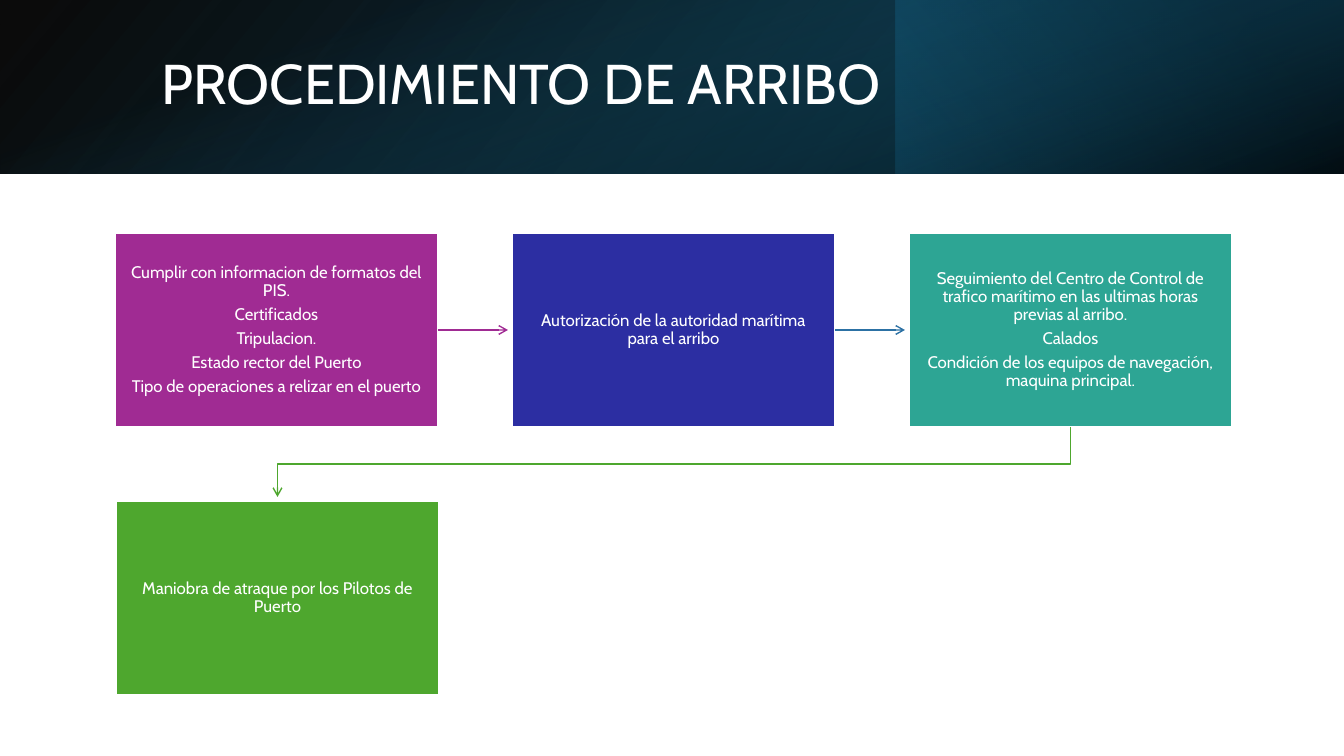
import pptx
import pptx.dml.color
import pptx.enum.dml
import pptx.enum.shapes
import pptx.enum.text
import pptx.oxml
import pptx.oxml.ns
import pptx.util

RGBColor = pptx.dml.color.RGBColor
RECTANGLE = pptx.enum.shapes.MSO_SHAPE.RECTANGLE

EMU_PER_PX = 914400 / 100.8
SLIDE_WIDTH, SLIDE_HEIGHT = 1344, 756
FONT = "Cabin"

WHITE = RGBColor(0xFF, 0xFF, 0xFF)
BLACK = RGBColor(0x00, 0x00, 0x00)
NAVY = RGBColor(0x10, 0x48, 0x62)
DEEP_BLUE = RGBColor(0x0B, 0x30, 0x41)
TEAL_BLUE = RGBColor(0x15, 0x60, 0x82)
PURPLE = RGBColor(0xA0, 0x2B, 0x93)
INDIGO = RGBColor(0x2C, 0x2E, 0xA2)
STEEL = RGBColor(0x2C, 0x71, 0xA4)
TURQUOISE = RGBColor(0x2D, 0xA5, 0x94)
GREEN = RGBColor(0x4E, 0xA7, 0x2E)

# Each step: fill colour and paragraphs
STEPS = [
    (PURPLE, ["Cumplir con informacion de formatos del PIS.",
              "Certificados",
              "Tripulacion.",
              "Estado rector del Puerto",
              "Tipo de operaciones a relizar en el puerto"]),
    (INDIGO, ["Autorización de la autoridad marítima para el arribo"]),
    (TURQUOISE, ["Seguimiento del Centro de Control de trafico marítimo "
                 "en las ultimas horas previas al arribo.",
                 "Calados",
                 "Condición de los equipos de navegación, maquina principal."]),
    (GREEN, ["Maniobra de atraque por los Pilotos de Puerto"]),
]
ARROW_COLORS = [PURPLE, STEEL]
COLUMNS = 3
STEP_WIDTH, STEP_HEIGHT = 323, 194
COLUMN_PITCH, ROW_PITCH = 397, 268
ARROW_GAP = 4


def px(length):
    return pptx.util.Emu(round(length * EMU_PER_PX))


def add_xml_child(parent, tag, **attributes):
    child = pptx.oxml.parse_xml(f"<a:{tag} {pptx.oxml.ns.nsdecls('a')}/>")
    for name, value in attributes.items():
        child.set(name, value)
    parent.append(child)


def style_arrow(arrow, color):
    arrow.line.color.rgb = color
    arrow.line.width = pptx.util.Pt(1)
    add_xml_child(arrow.line._get_or_add_ln(), "tailEnd", type="arrow")


def add_gradient(slide, box, rotation, angle, stops):
    """Add a borderless rectangle; stops are (position %, colour, opacity %)."""
    shape = slide.shapes.add_shape(RECTANGLE, *map(px, box))
    shape.shadow.inherit = False
    shape.rotation = rotation
    shape.line.fill.background()
    shape.fill.gradient()
    shape.fill.gradient_angle = 360 - angle
    for stop, (position, color, opacity) in zip(shape.fill.gradient_stops, stops):
        stop.position = position / 100
        stop.color.rgb = color
        color_element = stop._gs.find(pptx.oxml.ns.qn("a:srgbClr"))
        add_xml_child(color_element, "alpha", val=str(opacity * 1000))


def add_header(slide, left, top, width, height):
    # Layered gradients
    third = width // 3
    add_gradient(slide, (left, top, width, height), 0, 40,
                 [(0, BLACK, 96), (100, NAVY, 100)])
    add_gradient(slide, (left + width - third, top, third, height), 180, 320,
                 [(19, DEEP_BLUE, 68), (100, TEAL_BLUE, 79)])
    offset = (width - height) / 2
    add_gradient(slide, (left + offset, top - offset, height, width), 90, 340,
                 [(23, TEAL_BLUE, 0), (99, BLACK, 74)])

    # Title, brought in front of the gradients
    title = slide.shapes.title
    title.element.getparent().append(title.element)
    title.left, title.top = px(left + 151), px(top + 38)
    title.width, title.height = px(1107), px(97)
    frame = title.text_frame
    frame.text = "PROCEDIMIENTO DE ARRIBO"
    frame.vertical_anchor = pptx.enum.text.MSO_ANCHOR.MIDDLE
    paragraph = frame.paragraphs[0]
    paragraph.alignment = pptx.enum.text.PP_ALIGN.LEFT
    paragraph.line_spacing = 0.9
    paragraph.font.name = FONT
    paragraph.font.size = pptx.util.Pt(40)
    paragraph.font.color.rgb = WHITE


def add_step(slide, left, top, color, lines):
    shape = slide.shapes.add_shape(
        RECTANGLE, px(left), px(top), px(STEP_WIDTH), px(STEP_HEIGHT))
    shape.shadow.inherit = False
    shape.fill.solid()
    shape.fill.fore_color.rgb = color
    shape.line.color.rgb = WHITE
    shape.line.width = pptx.util.Pt(1.5)
    frame = shape.text_frame
    frame.word_wrap = True
    frame.vertical_anchor = pptx.enum.text.MSO_ANCHOR.MIDDLE
    frame.margin_left = frame.margin_right = px(16)
    frame.margin_top = frame.margin_bottom = px(16)
    frame.text = "\n".join(lines)
    for paragraph in frame.paragraphs:
        paragraph.alignment = pptx.enum.text.PP_ALIGN.CENTER
        paragraph.line_spacing = 0.9
        paragraph.space_after = pptx.util.Pt(4.2)
        paragraph.font.name = FONT
        paragraph.font.size = pptx.util.Pt(12)
        paragraph.font.color.rgb = WHITE
    return shape


def add_flow(slide, left, top):
    # Step boxes; the second row sits one pixel further right
    boxes = []
    for index, (color, lines) in enumerate(STEPS):
        row, column = divmod(index, COLUMNS)
        boxes.append(add_step(slide, left + column * COLUMN_PITCH + row,
                              top + row * ROW_PITCH, color, lines))

    # Arrows between neighbours in the first row
    middle = top + STEP_HEIGHT / 2
    for index, color in enumerate(ARROW_COLORS):
        start = left + index * COLUMN_PITCH + STEP_WIDTH
        end = left + (index + 1) * COLUMN_PITCH - ARROW_GAP
        arrow = slide.shapes.add_connector(
            pptx.enum.shapes.MSO_CONNECTOR.STRAIGHT,
            px(start), px(middle), px(end), px(middle))
        arrow.begin_connect(boxes[index], 3)
        style_arrow(arrow, color)
        add_xml_child(arrow._element.spPr, "effectLst")

    # Bent arrow down to the second row
    start_x = left + (COLUMNS - 1) * COLUMN_PITCH + STEP_WIDTH / 2
    end_x = left + 1 + STEP_WIDTH / 2
    start_y = top + STEP_HEIGHT
    end_y = top + ROW_PITCH - ARROW_GAP
    bend_y = top + (STEP_HEIGHT + ROW_PITCH) / 2
    builder = slide.shapes.build_freeform(px(start_x), px(start_y))
    builder.add_line_segments(
        [(px(start_x), px(bend_y)), (px(end_x), px(bend_y)), (px(end_x), px(end_y))],
        close=False)
    bent_arrow = builder.convert_to_shape()
    bent_arrow.shadow.inherit = False
    bent_arrow.fill.background()
    style_arrow(bent_arrow, GREEN)


def main():
    presentation = pptx.Presentation()
    presentation.slide_width = px(SLIDE_WIDTH)
    presentation.slide_height = px(SLIDE_HEIGHT)
    slide = presentation.slides.add_slide(presentation.slide_layouts[5])
    add_header(slide, 0, 0, SLIDE_WIDTH, 174)
    add_flow(slide, 115, 233)
    presentation.save("out.pptx")


if __name__ == "__main__":
    main()
